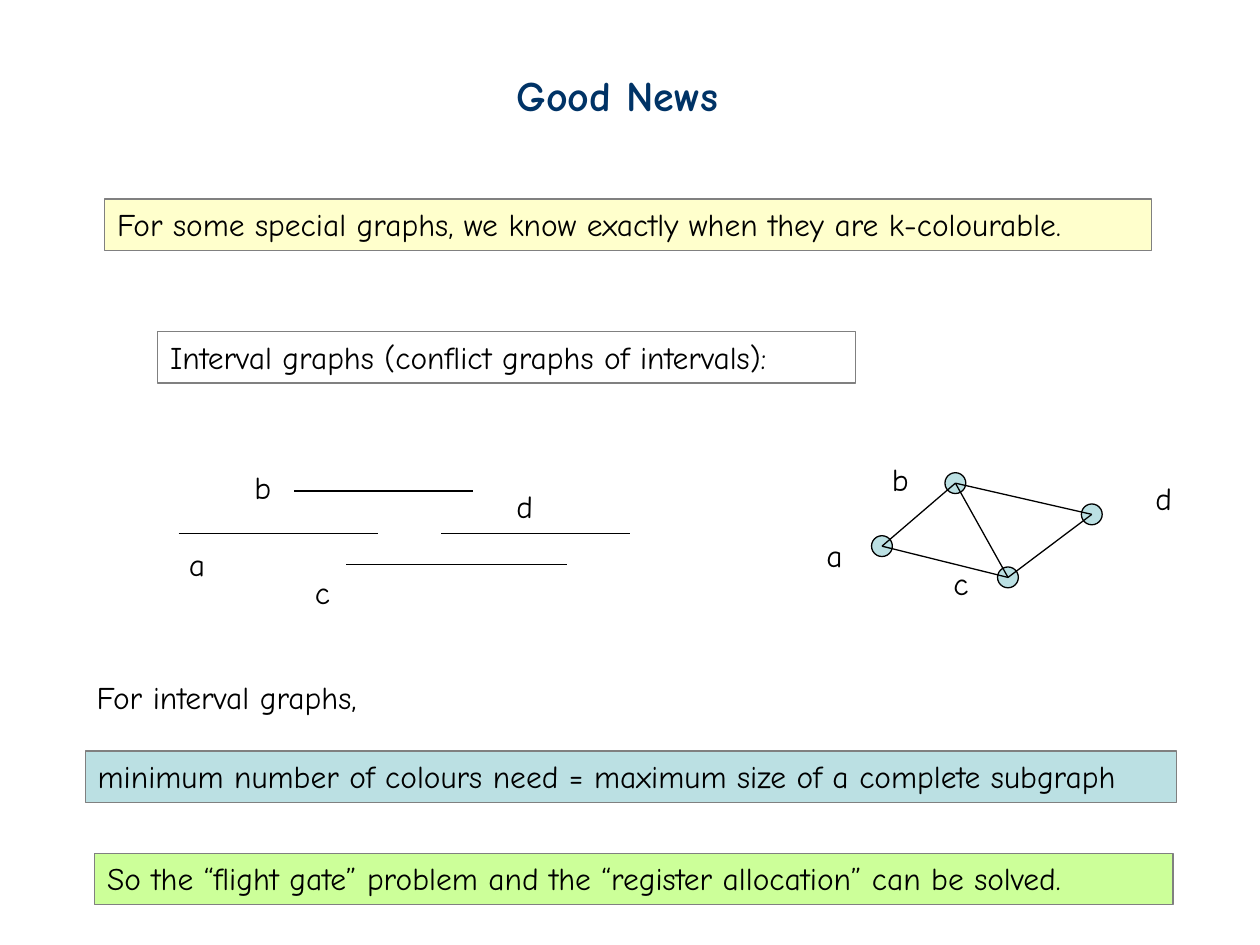
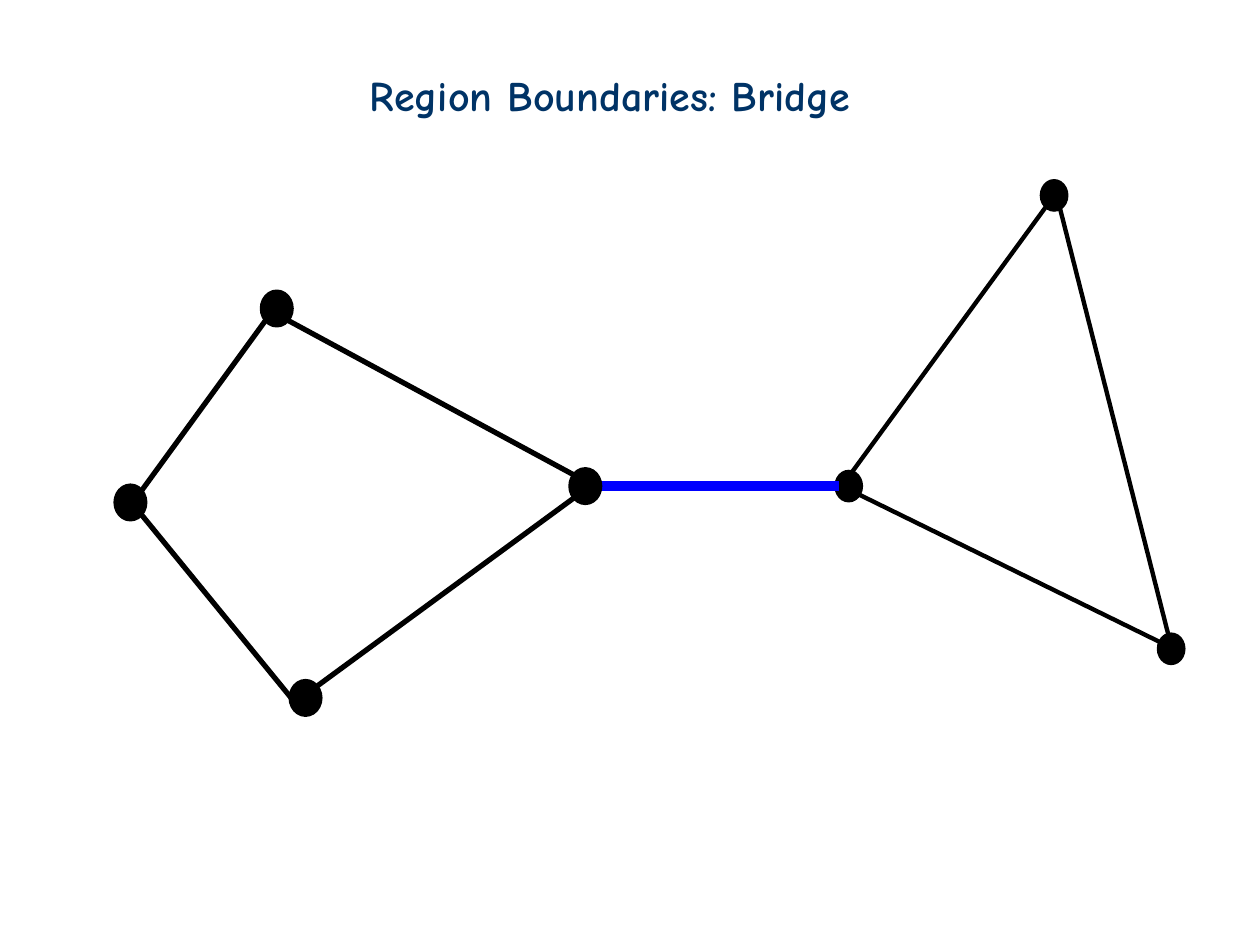
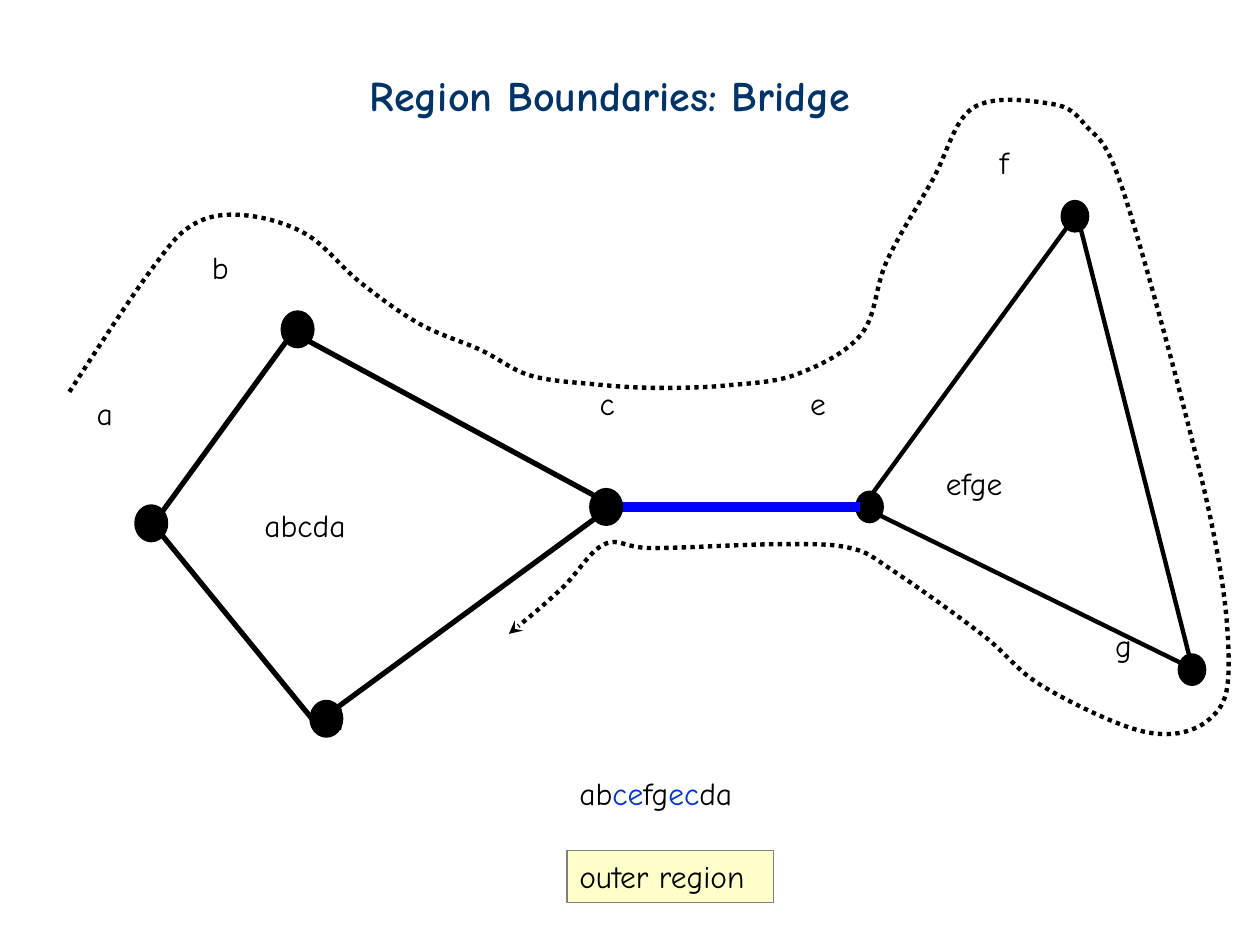
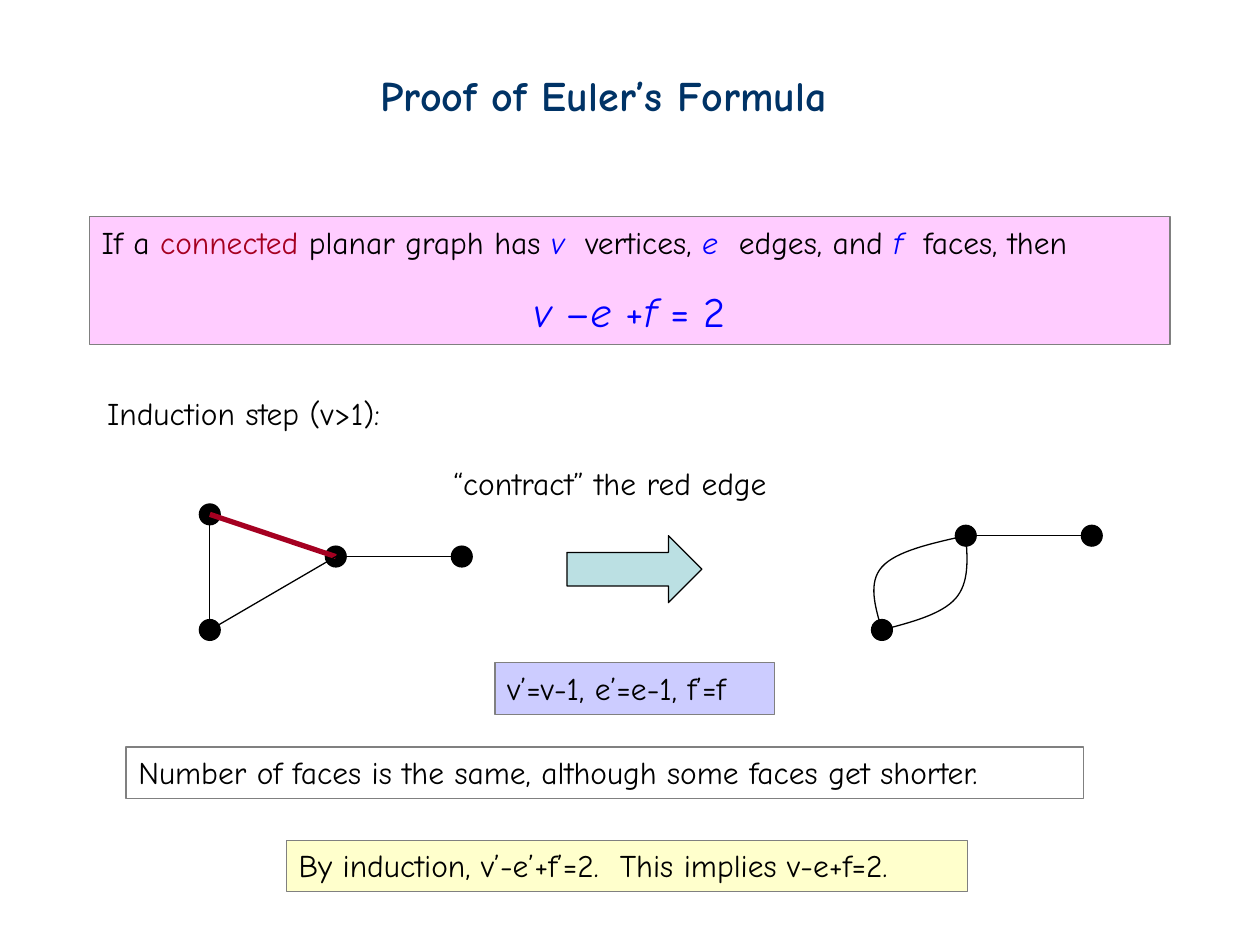
import lxml.etree
import pptx
import pptx.dml.color
import pptx.enum.dml
import pptx.enum.shapes
import pptx.enum.text
import pptx.oxml.ns
import pptx.util

Cm = pptx.util.Cm
Pt = pptx.util.Pt
RGBColor = pptx.dml.color.RGBColor
qn = pptx.oxml.ns.qn
PRESET = pptx.enum.shapes.MSO_SHAPE

BLACK = RGBColor(0x00, 0x00, 0x00)
NAVY = RGBColor(0x00, 0x33, 0x66)
GREY = RGBColor(0x80, 0x80, 0x80)
BLUE = RGBColor(0x00, 0x00, 0xFF)
LINK_BLUE = RGBColor(0x00, 0x33, 0xCC)
RED = RGBColor(0xA5, 0x00, 0x21)
YELLOW = RGBColor(0xFF, 0xFF, 0xCC)
TEAL = RGBColor(0xBB, 0xE0, 0xE3)
GREEN = RGBColor(0xCC, 0xFF, 0x99)
PINK = RGBColor(0xFF, 0xCC, 0xFF)
LILAC = RGBColor(0xCC, 0xCC, 0xFF)

FONT = "Comic Neue"
TEXT_SIZE = 18
TITLE_SIZE = 24
LABEL_HEIGHT = 1.02
BOX_HEIGHT = 1.04
NODE = (0.42, 0.42)
BRIDGE_NODE = (0.58, 0.66)


class Deck:
    """Draws on the current slide; all positions are in centimetres."""

    def __init__(self):
        self.presentation = pptx.Presentation()
        self.presentation.slide_width = Cm(25.4)
        self.presentation.slide_height = Cm(19.05)
        self.slide = None
        self.shapes = None

    def new_slide(self, title, left, width):
        layout = self.presentation.slide_layouts[5]
        self.slide = self.presentation.slides.add_slide(layout)
        self.end_group()
        shape = self.slide.shapes.title
        shape.left, shape.top = Cm(left), Cm(1.27)
        shape.width, shape.height = Cm(width), Cm(1.27)
        self.set_text(shape, [[(title, NAVY)]], TITLE_SIZE, bold=True)

    def begin_group(self):
        self.shapes = self.slide.shapes.add_group_shape().shapes

    def end_group(self):
        self.shapes = self.slide.shapes

    def set_text(self, shape, paragraphs, size=TEXT_SIZE, bold=False):
        """Fill a shape with paragraphs, each a list of (text, colour, italic) runs."""
        frame = shape.text_frame
        frame.word_wrap = True
        frame.auto_size = pptx.enum.text.MSO_AUTO_SIZE.NONE
        frame.vertical_anchor = pptx.enum.text.MSO_ANCHOR.TOP
        for index, runs in enumerate(paragraphs):
            paragraph = frame.add_paragraph() if index else frame.paragraphs[0]
            paragraph.alignment = pptx.enum.text.PP_ALIGN.LEFT
            paragraph.font.name = FONT
            paragraph.font.size = Pt(size)
            paragraph.font.bold = bold
            for text, colour, *italic in runs:
                run = paragraph.add_run()
                run.text = text
                run.font.color.rgb = colour
                if italic:
                    run.font.italic = italic[0]
        return frame

    def text(self, content, left, top, width):
        """Plain text; content is a string or a list of runs."""
        runs = [(content, BLACK)] if isinstance(content, str) else content
        shape = self.shapes.add_textbox(Cm(left), Cm(top), Cm(width), Cm(LABEL_HEIGHT))
        self.set_text(shape, [runs])

    def labels(self, places, width):
        for letter, (left, top) in places.items():
            self.text(letter, left, top, width)

    def preset(self, kind, left, top, width, height, fill, line=None, weight=0.75):
        shape = self.shapes.add_shape(kind, Cm(left), Cm(top), Cm(width), Cm(height))
        shape.shadow.inherit = False
        if fill is None:
            shape.fill.background()
        else:
            shape.fill.solid()
            shape.fill.fore_color.rgb = fill
        self.outline(shape, line, weight)
        return shape

    def outline(self, shape, colour, weight):
        if colour is None:
            shape.line.fill.background()
        else:
            shape.line.color.rgb = colour
            shape.line.width = Pt(weight)

    def box(self, content, left, top, width, fill=None, height=BOX_HEIGHT):
        """Framed text; content is a string or a list of paragraphs."""
        paragraphs = [[(content, BLACK)]] if isinstance(content, str) else content
        shape = self.preset(PRESET.RECTANGLE, left, top, width, height, fill, GREY)
        return self.set_text(shape, paragraphs)

    def node(self, centre, size=NODE, fill=BLACK, line=BLACK, weight=0.75):
        (x, y), (width, height) = centre, size
        self.preset(PRESET.OVAL, x - width / 2, y - height / 2, width, height,
                    fill, line, weight)

    def line(self, start, end, colour=BLACK, weight=0.75):
        connector = self.shapes.add_connector(
            pptx.enum.shapes.MSO_CONNECTOR.STRAIGHT,
            *(Cm(value) for value in (*start, *end)))
        self.outline(connector, colour, weight)
        lxml.etree.SubElement(connector.element.spPr, qn("a:effectLst"))

    def outline_shape(self, points, weight, close=False):
        """Unfilled freeform through the points."""
        vertices = [(Cm(x), Cm(y)) for x, y in points]
        builder = self.shapes.build_freeform(*vertices[0])
        builder.add_line_segments(vertices[1:], close=close)
        shape = builder.convert_to_shape()
        shape.shadow.inherit = False
        shape.fill.background()
        self.outline(shape, BLACK, weight)
        return shape

    def curve(self, knots, weight=0.75):
        """Smooth curve through the knots, as cubic Bezier segments."""
        shape = self.outline_shape(bezier_points(knots), weight)
        segments = shape.element.xpath(".//a:lnTo")
        for index in range(0, len(segments), 3):
            first = segments[index]
            first.tag = qn("a:cubicBezTo")
            for other in segments[index + 1:index + 3]:
                first.append(other[0])
                other.getparent().remove(other)
        return shape

    def dotted_arrow(self, knots, weight):
        shape = self.curve(knots, weight)
        shape.line.dash_style = pptx.enum.dml.MSO_LINE.ROUND_DOT
        line = shape.element.spPr.find(qn("a:ln"))
        lxml.etree.SubElement(line, qn("a:tailEnd"), type="stealth")


def midpoint(first, second):
    return tuple((a + b) / 2 for a, b in zip(first, second))


def bezier_points(knots):
    """Knots with two control points between each pair (Catmull-Rom tangents)."""
    before, after = {}, {}
    for index in range(1, len(knots) - 1):
        knot = knots[index]
        tangent = [(b - a) / 6 for a, b in zip(knots[index - 1], knots[index + 1])]
        before[index] = tuple(k - t for k, t in zip(knot, tangent))
        after[index] = tuple(k + t for k, t in zip(knot, tangent))
    last = len(knots) - 1
    after[0] = midpoint(knots[0], before[1])
    before[last] = midpoint(knots[last], after[last - 1])
    points = [knots[0]]
    for index in range(last):
        points += [after[index], before[index + 1], knots[index + 1]]
    return points


def good_news(deck):
    deck.new_slide("Good News", 10.16, 5)
    deck.box("For some special graphs, we know exactly when they are k-colourable.",
             2.11, 4.01, 21.11, YELLOW)
    deck.box("Interval graphs (conflict graphs of intervals):", 3.18, 6.68, 14.07)

    intervals = [(3.6, 7.62, 10.75), (5.93, 9.53, 9.9),
                 (6.98, 11.43, 11.38), (8.89, 12.7, 10.75)]
    for start, end, y in intervals:
        deck.line((start, y), (end, y))
    deck.labels({"a": (3.56, 10.87), "b": (4.88, 9.32),
                 "c": (6.1, 11.43), "d": (10.16, 9.7)}, 0.9)

    nodes = {"a": (17.78, 11.01), "b": (19.26, 9.74),
             "c": (20.32, 11.64), "d": (22.01, 10.37)}
    for centre in nodes.values():
        deck.node(centre, fill=TEAL)
    deck.labels({"a": (16.41, 10.69), "b": (17.73, 9.14),
                 "c": (18.97, 11.25), "d": (23.04, 9.53)}, 0.9)
    for start, end in ("ab", "ac", "bc", "bd", "dc"):
        deck.line(nodes[start], nodes[end])

    deck.text("For interval graphs,", 1.7, 13.54, 6.32)
    deck.box("minimum number of colours need = maximum size of a complete subgraph",
             1.72, 15.14, 22, TEAL)
    deck.box("So the “flight gate” problem and the “register allocation” can be solved.",
             1.91, 17.2, 21.74, GREEN)


def bridge_graph(deck, shift=0):
    """Quadrilateral and triangle joined by a bridge, moved down and right by shift."""
    def moved(*points):
        return [(x + shift, y + shift) for x, y in points]

    deck.new_slide("Region Boundaries: Bridge", 7.2, 11.15)
    deck.begin_group()
    deck.outline_shape(moved((16.97, 9.8), (21.29, 3.89), (23.62, 13.06)), 2.5, close=True)
    for centre in moved((23.61, 13.08), (21.25, 3.94), (17.11, 9.8)):
        deck.node(centre, BRIDGE_NODE, line=None)
    deck.line(*moved((11.99, 9.8), (16.92, 9.8)), BLUE, 6)
    for centre in moved((5.58, 6.22), (11.8, 9.8), (2.63, 10.13), (6.16, 14.07)):
        deck.node(centre, BRIDGE_NODE, weight=3)
    edges = [((6.38, 13.84), (11.58, 10.03)), ((2.84, 9.91), (5.36, 6.45)),
             ((2.84, 10.36), (5.87, 14.07)), ((5.79, 6.45), (11.58, 9.58))]
    for edge in edges:
        deck.line(*moved(*edge), weight=3)
    deck.end_group()


def bridge_boundaries(deck):
    bridge_graph(deck, shift=0.42)
    deck.begin_group()
    deck.labels({"a": (1.7, 7.82), "d": (6.35, 13.97), "b": (4.02, 4.88),
                 "c": (11.84, 7.62), "g": (22.23, 12.5), "f": (19.9, 2.75),
                 "e": (16.08, 7.62)}, 1.7)
    deck.end_group()
    deck.text("abcda", 5.08, 10.08, 2.24)
    deck.text("efge", 18.82, 9.22, 1.85)
    deck.text([("ab", BLACK), ("ce", LINK_BLUE), ("fg", BLACK),
               ("ec", LINK_BLUE), ("da", BLACK)], 11.43, 15.47, 3.91)
    outer_walk = [
        (1.4, 7.9), (3.05, 5.44), (3.91, 4.52), (4.93, 4.34), (6.17, 4.72),
        (7.26, 5.69), (8.46, 6.53), (9.7, 7.06), (10.69, 7.57), (12.01, 7.75),
        (13.23, 7.82), (14.66, 7.77), (16.08, 7.54), (17.37, 6.73), (17.88, 5.26),
        (18.8, 3.63), (19.61, 2.18), (21.11, 2.08), (21.87, 2.51), (22.68, 3.96),
        (24.33, 10.11), (24.77, 13.31), (24.38, 14.5), (23.11, 14.76), (21.03, 13.84),
        (19.81, 12.8), (18.01, 11.51), (17.15, 11.05), (15.75, 10.97), (13.16, 11.05),
        (12.19, 10.97), (11.33, 11.86), (10.26, 12.78)]
    deck.dotted_arrow(outer_walk, 2.5)
    deck.box("outer region", 11.43, 17.15, 4.17, YELLOW)


def euler_proof(deck):
    deck.new_slide("Proof of Euler’s Formula", 7.42, 10.52)
    deck.text("Induction step (v>1):", 1.91, 7.82, 6.53)
    statement = [("If a ", BLACK), ("connected", RED), (" planar graph has ", BLACK),
                 ("v  ", BLUE, True), ("vertices, ", BLACK), ("e  ", BLUE, True),
                 ("edges, and ", BLACK), ("f  ", BLUE, True), ("faces, then", BLACK)]
    formula = [("v ", BLUE, True), ("–", BLUE), ("e ", BLUE, True),
               ("+", BLUE), ("f", BLUE, True), (" = 2", BLUE)]
    frame = deck.box([statement, formula], 1.8, 4.37, 21.79, PINK, height=2.57)
    formula_paragraph = frame.paragraphs[1]
    formula_paragraph.alignment = pptx.enum.text.PP_ALIGN.CENTER
    formula_paragraph.line_spacing = 1.5
    formula_paragraph.font.size = Pt(TITLE_SIZE)

    top, middle, bottom, end = (4.23, 10.37), (6.77, 11.22), (4.23, 12.7), (9.31, 11.22)
    for centre in (top, middle, bottom, end):
        deck.node(centre)
    deck.line(top, bottom)
    deck.line(top, middle, RED, 3)
    deck.line(bottom, middle)
    deck.line(middle, end)

    deck.preset(PRESET.RIGHT_ARROW, 11.43, 10.8, 2.72, 1.35, TEAL, BLACK)
    deck.text("“contract” the red edge", 8.89, 9.22, 7.57)

    lower, merged, right = (17.78, 12.7), (19.47, 10.8), (22.01, 10.8)
    for centre in (lower, merged, right):
        deck.node(centre)
    deck.line(merged, right)
    for bend in ((17.78, 11.43), (19.26, 12.07)):
        deck.curve([merged, bend, lower])

    deck.box("v’=v-1, e’=e-1, f’=f", 9.98, 13.36, 5.64, LILAC)
    deck.box("Number of faces is the same, although some faces get shorter.",
             2.54, 15.06, 19.3)
    deck.box("By induction, v’-e’+f’=2.  This implies v-e+f=2.", 5.77, 16.94, 13.74, YELLOW)


def main():
    deck = Deck()
    good_news(deck)
    bridge_graph(deck)
    bridge_boundaries(deck)
    euler_proof(deck)
    deck.presentation.save("out.pptx")


if __name__ == "__main__":
    main()
